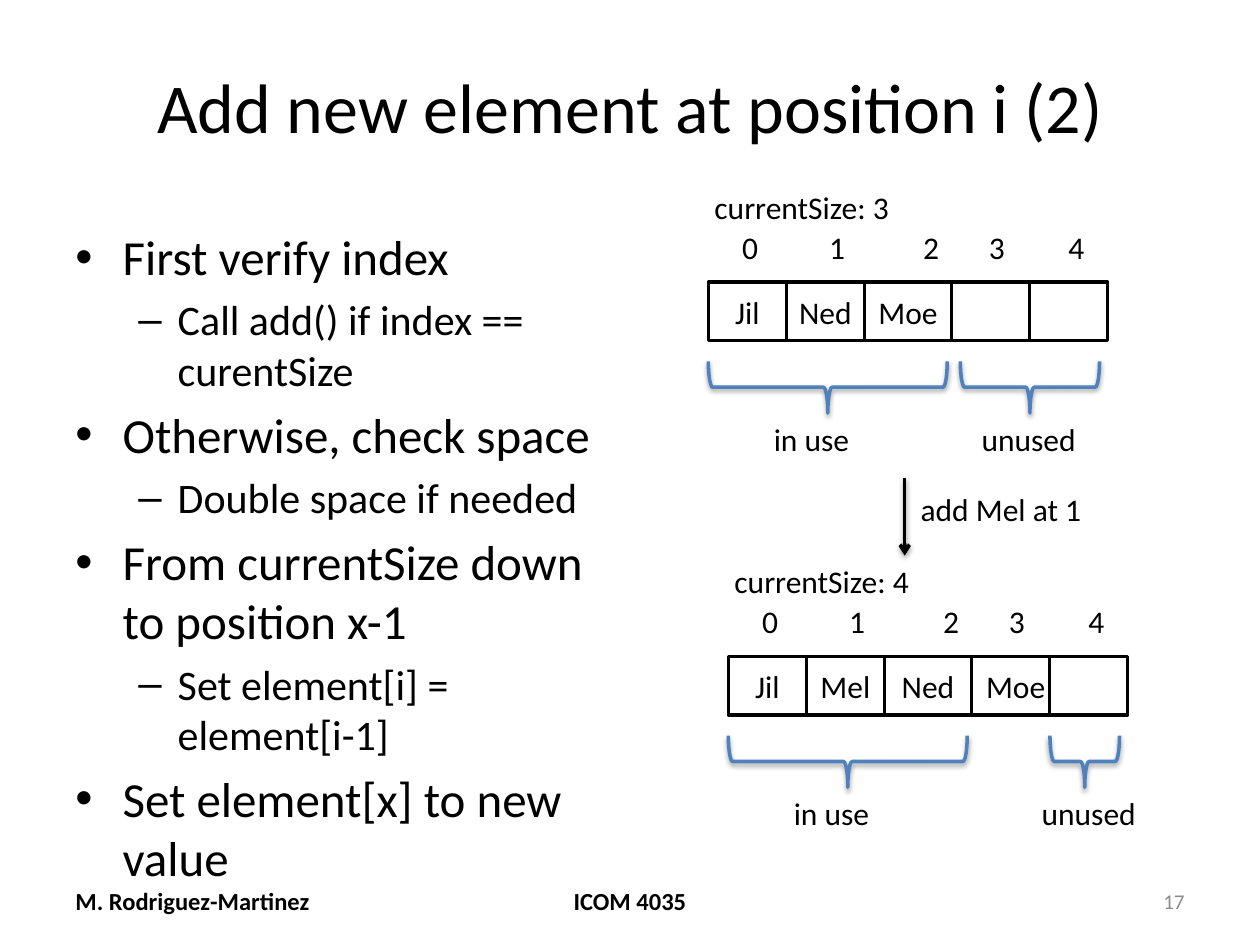
import pptx
import pptx.util
import pptx.oxml
import pptx.oxml.ns
import pptx.dml.color
import pptx.enum.text
import pptx.enum.shapes
import lxml.etree
from dataclasses import dataclass

Pt = pptx.util.Pt
qn = pptx.oxml.ns.qn
Align = pptx.enum.text.PP_ALIGN
Anchor = pptx.enum.text.MSO_ANCHOR
Kind = pptx.enum.shapes.MSO_SHAPE


@dataclass
class Theme:
    face: str = "Calibri"
    ink: str = "000000"
    paper: str = "FFFFFF"
    brace: str = "4F81BD"
    mute: str = "8C8C8C"
    title: int = 40
    list: tuple = (28, 24)
    label: int = 18
    foot: int = 14
    page: int = 12
    line: int = 2


def color(code):
    return pptx.dml.color.RGBColor.from_string(code)


def node(parent, tag, **attrs):
    return lxml.etree.SubElement(parent, qn(tag), {k: str(v) for k, v in attrs.items()})


class Deck:
    def __init__(self, theme):
        self.theme = theme
        self.file = pptx.Presentation()
        self.file.slide_width, self.file.slide_height = Pt(720), Pt(540)
        self.slide = self.file.slides.add_slide(self.file.slide_layouts[5])

    def style(self, para, size, ink=None, bold=False, align=Align.LEFT):
        font = para.font
        font.name, font.size, font.bold = self.theme.face, Pt(size), bold
        font.color.rgb = color(ink or self.theme.ink)
        para.alignment = align

    def title(self, text, x, y, w, h):
        shape = self.slide.shapes.title
        shape.left, shape.top, shape.width, shape.height = map(Pt, (x, y, w, h))
        shape.text_frame.text = text
        shape.text_frame.vertical_anchor = Anchor.MIDDLE
        self.style(shape.text_frame.paragraphs[0], self.theme.title, align=Align.CENTER)

    def text(self, text, x, y, w, h=29, size=None, wrap=False, host=None,
             anchor=Anchor.TOP, **look):
        shapes = (host or self.slide).shapes
        frame = shapes.add_textbox(*map(Pt, (x, y, w, h))).text_frame
        frame.text, frame.word_wrap, frame.vertical_anchor = text, wrap, anchor
        self.style(frame.paragraphs[0], size or self.theme.label, **look)
        return frame

    def list(self, items, x, y, w, h):
        frame = self.slide.shapes.add_textbox(*map(Pt, (x, y, w, h))).text_frame
        frame.word_wrap = True
        marks = (("•", 27, -27), ("–", 58.5, -22.5))
        for i, (level, text) in enumerate(items):
            para = frame.add_paragraph() if i else frame.paragraphs[0]
            para.text, para.level = text, level
            size = self.theme.list[level]
            self.style(para, size)
            para.space_before = Pt(size * 0.2)
            mark, left, hang = marks[level]
            props = para._p.get_or_add_pPr()
            props.set("marL", str(int(Pt(left))))
            props.set("indent", str(int(Pt(hang))))
            font = node(props, "a:buFont", typeface="Arial")
            bullet = node(props, "a:buChar", char=mark)
            run = props.find(qn("a:defRPr"))
            if run is not None:
                run.addprevious(font)
                run.addprevious(bullet)

    def cell(self, host, text, x, y, w, h):
        shape = host.shapes.add_shape(Kind.RECTANGLE, *map(Pt, (x, y, w, h)))
        shape.shadow.inherit = False
        shape.fill.solid()
        shape.fill.fore_color.rgb = color(self.theme.paper)
        shape.line.color.rgb = color(self.theme.ink)
        shape.line.width = Pt(self.theme.line)
        if text:
            frame = shape.text_frame
            frame.text, frame.word_wrap = text, False
            frame.vertical_anchor = Anchor.MIDDLE
            self.style(frame.paragraphs[0], self.theme.label, align=Align.CENTER)

    def tabs(self, host, items, stops, x, y, w):
        frame = self.text("\t".join(items), x, y, w, wrap=True, host=host)
        props = frame.paragraphs[0]._p.get_or_add_pPr()
        tabs = lxml.etree.Element(qn("a:tabLst"))
        for stop in stops:
            node(tabs, "a:tab", pos=int(Pt(stop)), algn="l")
        run = props.find(qn("a:defRPr"))
        if run is None:
            props.append(tabs)
        else:
            run.addprevious(tabs)

    def shade(self, shape):
        effect = node(shape._element.spPr, "a:effectLst")
        cast = node(effect, "a:outerShdw", blurRad=int(Pt(3.1)), dist=int(Pt(1.6)),
                    dir=5400000, rotWithShape=0)
        ink = node(cast, "a:srgbClr", val=self.theme.ink)
        node(ink, "a:alpha", val=38000)

    def brace(self, x, y, w, h):
        left, top = x + (w - h) / 2, y + (h - w) / 2
        shape = self.slide.shapes.add_shape(Kind.LEFT_BRACE, *map(Pt, (left, top, h, w)))
        shape.rotation = 270
        shape.fill.background()
        shape.line.color.rgb = color(self.theme.brace)
        shape.line.width = Pt(self.theme.line)
        self.shade(shape)

    def arrow(self, x, y, end):
        kind = pptx.enum.shapes.MSO_CONNECTOR.STRAIGHT
        line = self.slide.shapes.add_connector(kind, *map(Pt, (x, y, x, end)))
        line.line.color.rgb = color(self.theme.ink)
        line.line.width = Pt(self.theme.line)
        node(line._element.spPr.find(qn("a:ln")), "a:tailEnd", type="arrow")
        self.shade(line)

    def array(self, names, widths, x, y, free, note):
        group = self.slide.shapes.add_group_shape()
        left = x
        for i, (name, width) in enumerate(zip(names, widths)):
            extra = 5.8 if i == 3 and name else 0
            self.cell(group, name, left, y, width + extra, 33.3)
            left += width
        self.tabs(group, "01234", (49.7, 103.4, 141, 186.4), x + 12.2, y - 34.6, 212.4)
        size = sum(map(bool, names))
        self.text(f"currentSize: {size}", x - 3.6, y - 57.6, 116)
        for start, end, tag, shift, wide in (
                (0, 136.5, "in use", 30.3, 58.5), (free, 223.5, "unused", note, 69)):
            self.brace(x + start, y + 45.2, end - start, 29.5)
            self.text(tag, x + shift, y + 75, wide)


def main():
    theme = Theme()
    deck = Deck(theme)
    deck.title("Add new element at position i (2)", 36, 21.6, 648, 77)
    deck.list([
        (0, "First verify index"),
        (1, "Call add() if index == curentSize"),
        (0, "Otherwise, check space"),
        (1, "Double space if needed"),
        (0, "From currentSize down to position x-1"),
        (1, "Set element[i] = element[i-1]"),
        (0, "Set element[x] to new value"),
    ], 36, 126, 318, 356.5)
    for text, x, w, size, look in (
            ("M. Rodriguez-Martinez", 36, 168, theme.foot, dict(bold=True)),
            ("ICOM 4035", 246, 228, theme.foot, dict(bold=True, align=Align.CENTER)),
            ("17", 516, 168, theme.page, dict(ink=theme.mute, align=Align.RIGHT))):
        deck.text(text, x, 500.5, w, 28.75, size, True, anchor=Anchor.MIDDLE, **look)
    widths = (44.6, 44.6, 49.8, 44.6, 44.6)
    deck.array(("Jil", "Ned", "Moe", "", ""), widths, 404.8, 161.3, 144, 149)
    deck.array(("Jil", "Mel", "Ned", "Moe", ""), widths, 416.2, 375.2, 183.8, 172)
    deck.arrow(517, 273, 317.5)
    deck.text("add Mel at 1", 519, 276.5, 107)
    deck.file.save("out.pptx")


if __name__ == "__main__":
    main()
